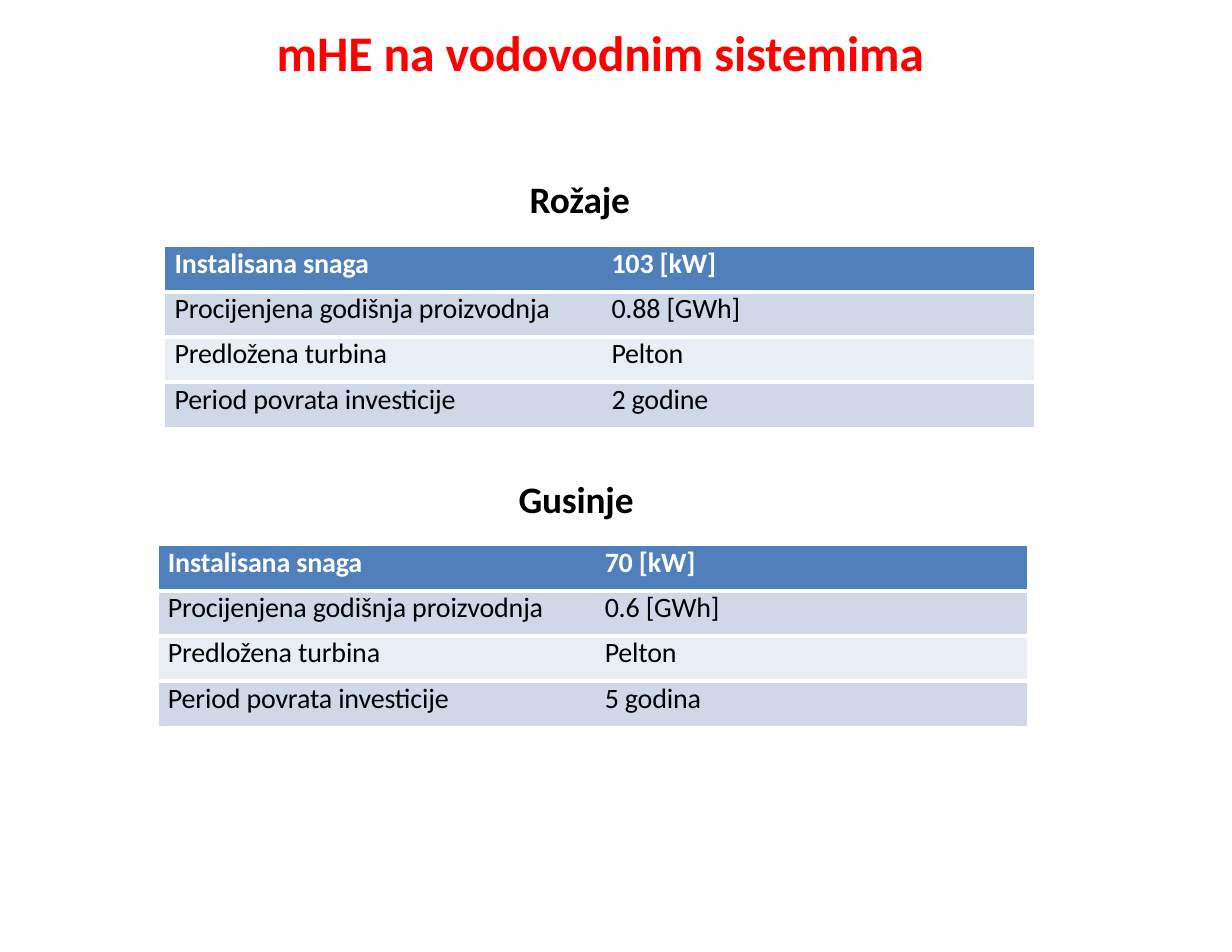
from lxml.etree import SubElement
from pptx import Presentation
from pptx.dml.color import RGBColor
from pptx.enum.text import MSO_ANCHOR, MSO_AUTO_SIZE, PP_ALIGN
from pptx.oxml.ns import qn
from pptx.util import Inches, Pt

RED = RGBColor(0xFF, 0x00, 0x00)
BLACK = RGBColor(0x00, 0x00, 0x00)
WHITE = RGBColor(0xFF, 0xFF, 0xFF)
HEADER_BLUE = RGBColor(0x4F, 0x80, 0xBC)
BAND_DARK = RGBColor(0xD0, 0xD8, 0xE8)
BAND_LIGHT = RGBColor(0xE9, 0xED, 0xF4)
ROW_FILLS = [HEADER_BLUE, BAND_DARK, BAND_LIGHT, BAND_DARK]
PLAIN_TABLE_STYLE = "{2D5ABB26-0587-4C30-8999-92F81FD0307C}"

LABELS = ["Instalisana snaga", "Procijenjena godišnja proizvodnja",
          "Predložena turbina", "Period povrata investicije"]
# town, heading left and top, table left and top, values
PLANTS = [
    ("Rožaje", 4.73, 1.57, 1.47, 2.2,
     ["103 [kW]", "0.88 [GWh]", "Pelton", "2 godine"]),
    ("Gusinje", 4.63, 4.25, 1.41, 4.87,
     ["70 [kW]", "0.6 [GWh]", "Pelton", "5 godina"]),
]


def write(frame, text, size=18, color=BLACK, bold=False, left=0, top=0):
    frame.margin_left, frame.margin_top = Inches(left), Inches(top)
    frame.margin_right = frame.margin_bottom = 0
    paragraph = frame.paragraphs[0]
    paragraph.alignment = PP_ALIGN.LEFT
    run = paragraph.add_run()
    run.text = text
    run.font.name = "Calibri"
    run.font.size = Pt(size)
    run.font.bold = bold
    run.font.color.rgb = color
    run.font._element.set("spc", "-10")


def add_white_border(cell, side, points):
    """Draw one side of a cell: lnL, lnR, lnT or lnB."""
    properties = cell._tc.get_or_add_tcPr()
    line = SubElement(properties, qn(f"a:{side}"), w=str(Pt(points)))
    fill = SubElement(line, qn("a:solidFill"))
    SubElement(fill, qn("a:srgbClr"), val=str(WHITE))


prs = Presentation()
prs.slide_width, prs.slide_height = Inches(11), Inches(8.5)
slide = prs.slides.add_slide(prs.slide_layouts[5])

title = slide.shapes.title
title.left, title.top = Inches(1.67), Inches(-0.02)
title.width, title.height = Inches(7.59), Inches(0.76)
title.text_frame.auto_size = MSO_AUTO_SIZE.NONE
title.text_frame.vertical_anchor = MSO_ANCHOR.TOP
write(title.text_frame, "mHE na vodovodnim sistemima", size=32, color=RED,
      bold=True, left=0.8, top=0.21)

for town, town_left, town_top, table_left, table_top, values in PLANTS:
    heading = slide.shapes.add_textbox(Inches(town_left), Inches(town_top),
                                       Inches(1.1), Inches(0.43))
    heading.text_frame.word_wrap = True
    write(heading.text_frame, town, size=24, bold=True)

    table = slide.shapes.add_table(4, 2, Inches(table_left), Inches(table_top),
                                   Inches(7.77), Inches(1.62)).table
    table._tbl.tblPr.find(qn("a:tableStyleId")).text = PLAIN_TABLE_STYLE
    table.columns[0].width = Inches(3.75)
    table.columns[1].width = Inches(4.02)

    for row, entries in enumerate(zip(LABELS, values)):
        is_header = row == 0
        for column, entry in enumerate(entries):
            cell = table.cell(row, column)
            write(cell.text_frame, entry, bold=is_header,
                  color=WHITE if is_header else BLACK)
            cell.margin_left = Inches((0.09, 0.24)[column])
            cell.margin_top = cell.margin_right = cell.margin_bottom = 0
            add_white_border(cell, ("lnL", "lnR")[column], 1)
            if row in (1, 2):
                add_white_border(cell, "lnT", 3)
            else:
                add_white_border(cell, "lnT" if is_header else "lnB", 1)
            if row in (0, 1):
                add_white_border(cell, "lnB", 3)
            cell.fill.solid()
            cell.fill.fore_color.rgb = ROW_FILLS[row]

prs.save("out.pptx")
